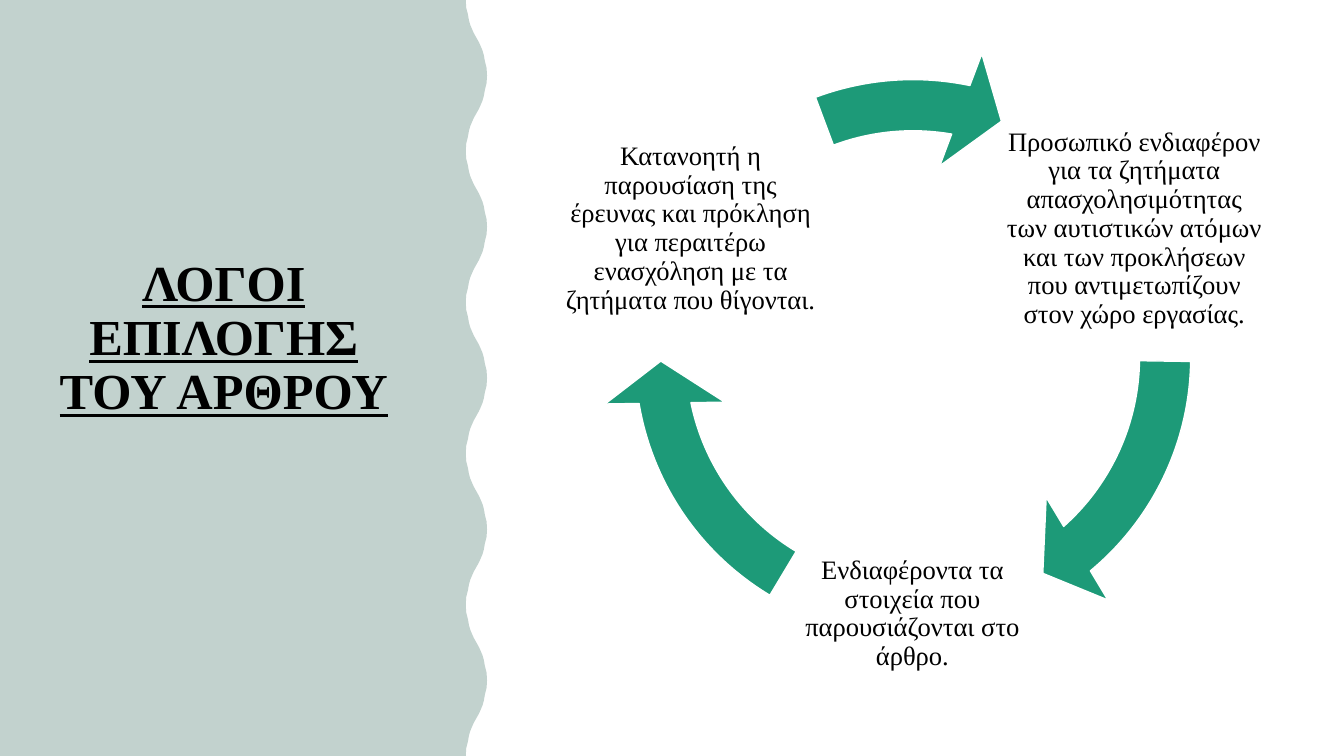
from lxml import etree
from pptx import Presentation
from pptx.dml.color import RGBColor
from pptx.enum.shapes import MSO_SHAPE
from pptx.enum.text import MSO_ANCHOR, PP_ALIGN
from pptx.oxml.ns import qn
from pptx.util import Inches, Pt

BLACK = RGBColor(0x00, 0x00, 0x00)
WHITE = RGBColor(0xFF, 0xFF, 0xFF)
GREEN = RGBColor(0x1D, 0x9A, 0x78)
DARK_GREEN = RGBColor(0x0E, 0x4D, 0x3C)
CENTER = PP_ALIGN.CENTER
MIDDLE = MSO_ANCHOR.MIDDLE
CIRCULAR_ARROW = MSO_SHAPE.CIRCULAR_ARROW

# One half wave: (share of its height, share of its swing)
RISE = [(0, 0), (0.1, 0.02), (0.19, 0.1), (0.27, 0.15),
        (0.33, 0.21), (0.39, 0.3), (0.44, 0.38), (0.5, 0.5)]
HALF_WAVE = RISE + [(1 - drop, 1 - swing) for drop, swing in RISE[-2::-1]]


class CycleSlide:
    """Style and slide; lengths are columns and rows of a 100 x 100 grid."""

    font = "Times New Roman"
    line_spacing = 0.9

    def __init__(self, prs):
        self.slide = prs.slides.add_slide(prs.slide_layouts[6])
        self.shapes = self.slide.shapes
        self.col = prs.slide_width / 100
        self.row = prs.slide_height / 100

    def point(self, x, y):
        return round(x * self.col), round(y * self.row)

    def wavy_panel(self, inner, swing, half_waves, color, opacity):
        height = 100 / half_waves
        edge = []
        for n in range(half_waves):
            for drop, share in HALF_WAVE:
                reach = share if n % 2 == 0 else 1 - share
                edge.append(self.point(inner + swing * reach, (n + drop) * height))
        builder = self.shapes.build_freeform(0, 0, scale=1.0)
        builder.add_line_segments(edge + [self.point(0, 100)], close=True)
        panel = builder.convert_to_shape()
        panel.shadow.inherit = False
        panel.fill.solid()
        panel.fill.fore_color.rgb = color
        panel.line.fill.background()
        tint = panel._element.spPr.find(qn("a:solidFill"))[0]
        etree.SubElement(tint, qn("a:alpha")).set("val", str(opacity * 1000))

    def text(self, x, y, width, height, words, size, inset=None, heading=False):
        box = self.shapes.add_textbox(*self.point(x, y), *self.point(width, height))
        frame = box.text_frame
        frame.word_wrap = True
        frame.vertical_anchor = MIDDLE
        if inset is not None:
            frame.margin_left = frame.margin_right = inset
            frame.margin_top = frame.margin_bottom = inset
        paragraph = frame.paragraphs[0]
        paragraph.alignment = CENTER
        paragraph.line_spacing = self.line_spacing
        run = paragraph.add_run()
        run.text = words
        run.font.name = self.font
        run.font.size = Pt(size)
        run.font.color.rgb = BLACK
        if heading:
            run.font.bold = run.font.underline = True

    def cycle_arrow(self, x, y, width, height, head, tail):
        arrow = self.shapes.add_shape(
            CIRCULAR_ARROW, *self.point(x, y), *self.point(width, height))
        for i, value in enumerate((0.082, 5.762, head, tail, 0.096)):
            arrow.adjustments[i] = value
        arrow.shadow.inherit = False
        arrow.fill.solid()
        arrow.fill.fore_color.rgb = GREEN
        arrow.line.color.rgb = WHITE
        arrow.line.width = Pt(1)


def main():
    prs = Presentation()
    prs.slide_width, prs.slide_height = Inches(13.33), Inches(7.5)
    page = CycleSlide(prs)

    # Side panel and title
    page.wavy_panel(34.66, 1.58, 10, DARK_GREEN, 25)
    page.text(3.38, 32.4, 26.55, 24.93, "ΛΟΓΟΙ ΕΠΙΛΟΓΗΣ ΤΟΥ ΑΡΘΡΟΥ", 36, heading=True)

    # Cycle of reasons: column, row, words, arrow head and tail angles
    reasons = [
        (74.57, 12.8,
         "Προσωπικό ενδιαφέρον για τα ζητήματα απασχολησιμότητας των αυτιστικών "
         "ατόμων και των προκλήσεων που αντιμετωπίζουν στον χώρο εργασίας.",
         29.636, 0.519),
        (58.06, 63.73,
         "Ενδιαφέροντα τα στοιχεία που παρουσιάζονται στο άρθρο.",
         101.719, 72.602),
        (41.56, 12.8,
         "Κατανοητή η παρουσίαση της έρευνας και πρόκληση για περαιτέρω "
         "ενασχόληση με τα ζητήματα που θίγονται.",
         168.565, 149.673),
    ]
    for x, y, words, head, tail in reasons:
        page.text(x, y, 19.65, 34.93, words, 19, inset=Inches(0.03))
        page.cycle_arrow(44.71, 6, 46.44, 82.53, head, tail)

    prs.save("out.pptx")


if __name__ == "__main__":
    main()
